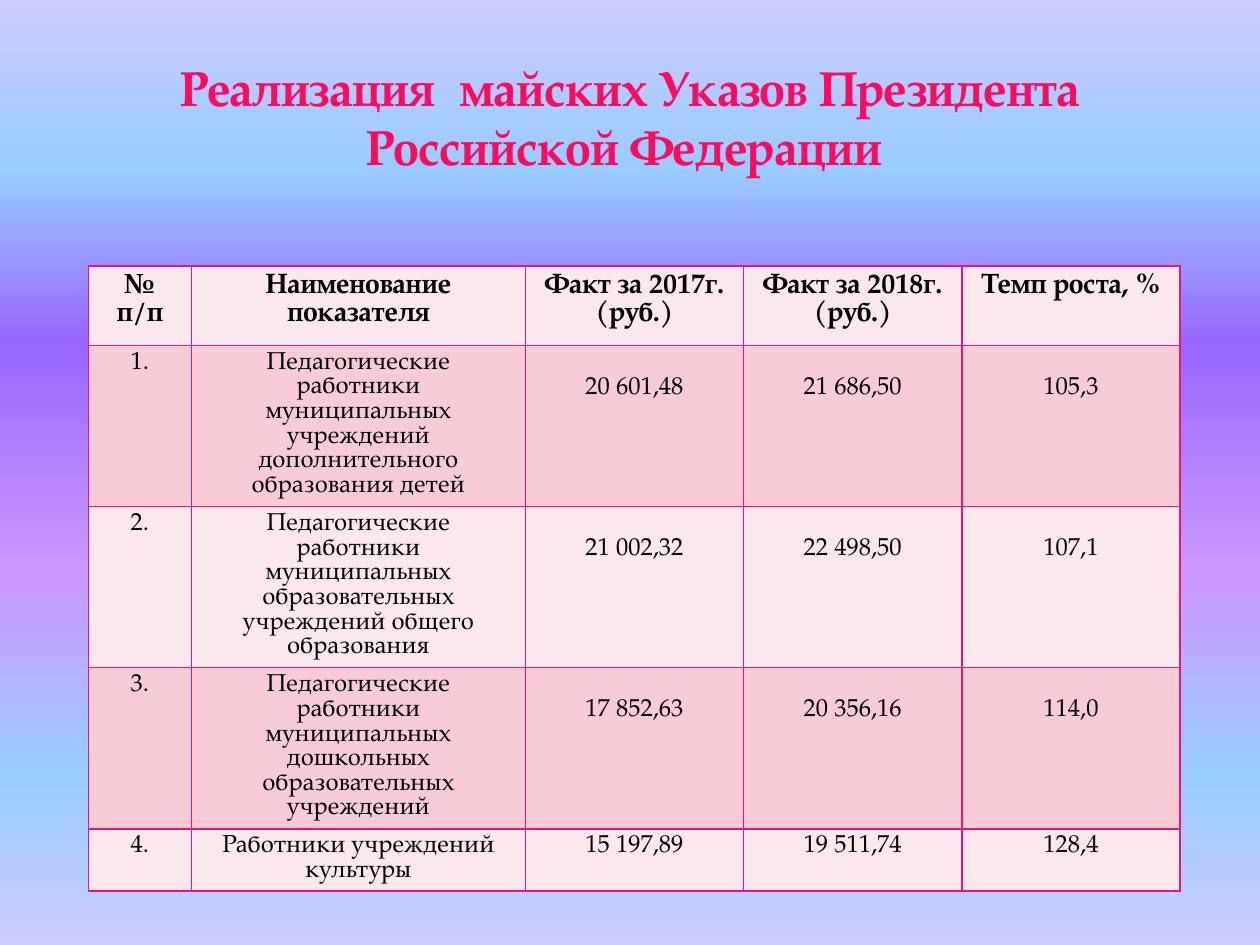
import pptx
import pptx.util
import pptx.dml.color
import pptx.enum.text
import pptx.oxml
import pptx.oxml.ns
from pptx.util import Cm

FONT = "TeX Gyre Pagella"
COLOURS = {
    "title": "FF0A5E",
    "text": "000000",
    "border": "EA157A",
    "light": "FBE8EC",
    "dark": "F7CCD7",
}
BACKGROUND_STOPS = [
    (0, "CCCCFF"), (18, "99CCFF"), (36, "9966FF"),
    (61, "CC99FF"), (82, "99CCFF"), (100, "CCCCFF"),
]
COLUMN_WIDTHS = [2.08, 6.73, 4.4, 4.4, 4.4]
ROW_HEIGHTS = [1.6, 3.25, 3.25, 3.25, 1.25]
ROWS = [
    ["№ п/п", "Наименование показателя", "Факт за 2017г. (руб.)",
     "Факт за 2018г. (руб.)", "Темп роста, %"],
    ["1.", "Педагогические работники муниципальных учреждений дополнительного образования детей",
     "20 601,48", "21 686,50", "105,3"],
    ["2.", "Педагогические работники муниципальных образовательных учреждений общего образования",
     "21 002,32", "22 498,50", "107,1"],
    ["3.", "Педагогические работники муниципальных дошкольных образовательных учреждений",
     "17 852,63", "20 356,16", "114,0"],
    ["4.", "Работники учреждений культуры", "15 197,89", "19 511,74", "128,4"],
]


def rgb(name):
    return pptx.dml.color.RGBColor.from_string(COLOURS[name])


def write_text(text_frame, text, size, colour="text", bold=False, line_height=None):
    text_frame.word_wrap = True
    paragraph = text_frame.paragraphs[0]
    paragraph.alignment = pptx.enum.text.PP_ALIGN.CENTER
    if line_height:
        paragraph.line_spacing = pptx.util.Pt(line_height)
    run = paragraph.add_run()
    run.text = text
    run.font.name = FONT
    run.font.size = pptx.util.Pt(size)
    run.font.bold = bold
    run.font.color.rgb = rgb(colour)


def paint_background(slide):
    fill = slide.background.fill
    fill.gradient()
    fill.gradient_angle = 270
    stop_list = next(slide.element.iter(pptx.oxml.ns.qn("a:gsLst")))
    for stop in list(stop_list):
        stop_list.remove(stop)
    for position, colour in BACKGROUND_STOPS:
        stop_list.append(pptx.oxml.parse_xml(
            f'<a:gs {pptx.oxml.ns.nsdecls("a")} pos="{position * 1000}">'
            f'<a:srgbClr val="{colour}"/></a:gs>'))


def add_title(slide, text):
    shape = slide.shapes.add_textbox(Cm(1.27), Cm(0.76), Cm(22.86), Cm(3.18))
    shape.text_frame.vertical_anchor = pptx.enum.text.MSO_ANCHOR.MIDDLE
    write_text(shape.text_frame, text, size=28, colour="title", bold=True)


def add_borders(cell):
    properties = cell._tc.get_or_add_tcPr()
    for index, side in enumerate(("lnL", "lnR", "lnT", "lnB")):
        properties.insert(index, pptx.oxml.parse_xml(
            f'<a:{side} {pptx.oxml.ns.nsdecls("a")} w="12700"><a:solidFill>'
            f'<a:srgbClr val="{COLOURS["border"]}"/></a:solidFill></a:{side}>'))


def add_table(slide):
    frame = slide.shapes.add_table(
        len(ROWS), len(COLUMN_WIDTHS), Cm(1.78), Cm(5.36),
        Cm(sum(COLUMN_WIDTHS)), Cm(sum(ROW_HEIGHTS)))
    table = frame.table
    for column, width in zip(table.columns, COLUMN_WIDTHS):
        column.width = Cm(width)
    for row_index, (row, height, texts) in enumerate(zip(table.rows, ROW_HEIGHTS, ROWS)):
        row.height = Cm(height)
        header = row_index == 0
        lowered = 0 < row_index < len(ROWS) - 1
        for column_index, (cell, text) in enumerate(zip(row.cells, texts)):
            cell.fill.solid()
            cell.fill.fore_color.rgb = rgb("dark" if row_index % 2 else "light")
            if lowered and column_index > 1:
                cell.margin_top = Cm(0.63)
            write_text(cell.text_frame, text, size=16 if header else 14,
                       bold=header, line_height=16 if header else 14.1)
            add_borders(cell)


def main():
    presentation = pptx.Presentation()
    presentation.slide_width = Cm(25.4)
    presentation.slide_height = Cm(19.05)
    slide = presentation.slides.add_slide(presentation.slide_layouts[6])
    paint_background(slide)
    add_title(slide, "Реализация  майских Указов Президента Российской Федерации ")
    add_table(slide)
    presentation.save("out.pptx")


if __name__ == "__main__":
    main()
